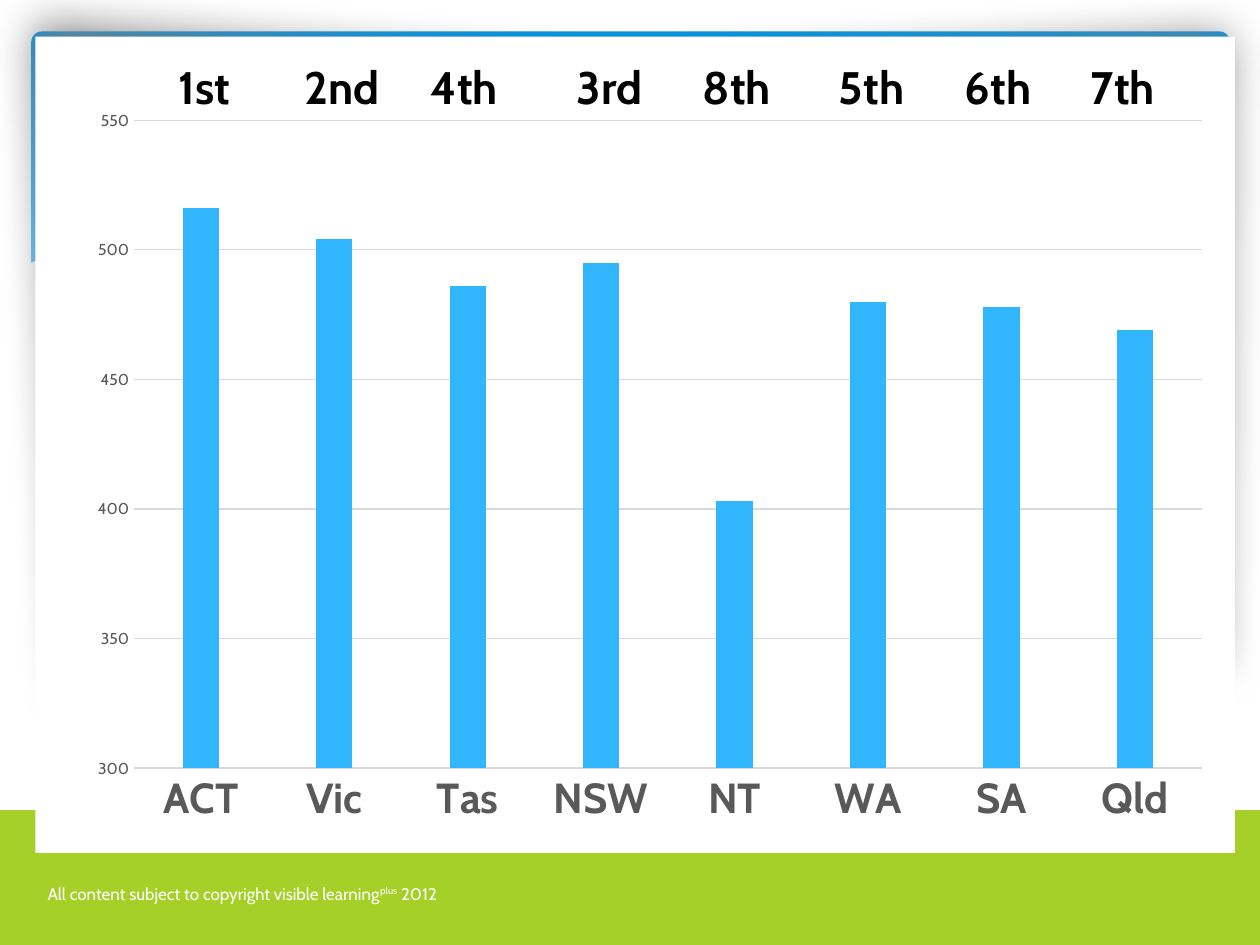
from lxml.etree import SubElement
from pptx import Presentation
from pptx.chart.data import CategoryChartData
from pptx.dml.color import RGBColor
from pptx.enum.chart import XL_CHART_TYPE as ChartType, XL_TICK_MARK as TickMark
from pptx.enum.shapes import MSO_SHAPE as Shape
from pptx.enum.text import MSO_ANCHOR as Anchor, MSO_AUTO_SIZE as AutoSize
from pptx.oxml import parse_xml
from pptx.oxml.ns import nsdecls, qn
from pptx.util import Inches, Pt

COLORS = {
    "white": "FFFFFF", "black": "000000", "green": "A5D028", "shade": "808080",
    "sky_top": "0293E0", "sky_end": "83D3FE", "bar": "31B6FD",
    "label": "595959", "grid": "D9D9D9",
}
FONT = "Cabin"
CELL = 0.1  # the grid has 100 columns and 75 rows of a tenth of an inch


def rgb(name):
    return RGBColor.from_string(COLORS[name])


def grid(*cells):
    return [Inches(cell * CELL) for cell in cells]


def style(font, size, color, bold=False):
    font.name, font.size, font.bold = FONT, Pt(size), bold
    font.color.rgb = rgb(color)


class SlideBuilder:
    def __init__(self, deck):
        self.slide = deck.slides.add_slide(deck.slide_layouts[6])
        self.shapes = self.slide.shapes

    def finish(self, shape, color):
        shape.shadow.inherit = False
        shape.line.fill.background()
        if color:
            shape.fill.solid()
            shape.fill.fore_color.rgb = rgb(color)
        return shape

    def box(self, cells, color=None, kind=Shape.RECTANGLE):
        return self.finish(self.shapes.add_shape(kind, *grid(*cells)), color)

    def gradient_panel(self, cells, colors, ends, corner):
        panel = self.box(cells, kind=Shape.ROUNDED_RECTANGLE)
        panel.adjustments[0] = corner
        panel.fill.gradient()
        panel.fill.gradient_angle = 270
        for stop, color, position in zip(panel.fill.gradient_stops, colors, ends):
            stop.color.rgb, stop.position = rgb(color), position

    def outline(self, points, color, soft_edge=0):
        start, *rest = points
        builder = self.shapes.build_freeform(*start, scale=Inches(CELL))
        builder.add_line_segments(rest, close=True)
        shape = self.finish(builder.convert_to_shape(), color)
        if soft_edge:
            effects = shape._element.spPr.find(qn("a:effectLst"))
            SubElement(effects, qn("a:softEdge"), rad=str(Inches(soft_edge * CELL)))

    def text(self, cells, runs, size, color, bold=False, tabs=(), grow=False):
        frame = self.shapes.add_textbox(*grid(*cells)).text_frame
        frame.word_wrap = True
        frame.vertical_anchor = Anchor.TOP
        frame.auto_size = AutoSize.SHAPE_TO_FIT_TEXT if grow else AutoSize.NONE
        paragraph = frame.paragraphs[0]
        if tabs:
            stops = SubElement(paragraph._p.get_or_add_pPr(), qn("a:tabLst"))
            for tab in tabs:
                SubElement(stops, qn("a:tab"), pos=str(Inches(tab * CELL)), algn="l")
        style(paragraph.font, size, color, bold)
        for words, raised in runs:
            run = paragraph.add_run()
            run.text = words
            if raised:
                run._r.get_or_add_rPr().set("baseline", "30000")

    def column_chart(self, cells, scores, low, high, step, plot):
        data = CategoryChartData()
        data.categories = list(scores)
        data.add_series("Series 1", scores.values())
        chart = self.shapes.add_chart(
            ChartType.COLUMN_CLUSTERED, *grid(*cells), data).chart
        chart.has_legend = chart.has_title = False
        style(chart.font, 10, "black")

        columns = chart.plots[0]
        columns.gap_width, columns.vary_by_categories = 269, False
        fill = columns.series[0].format.fill
        fill.solid()
        fill.fore_color.rgb = rgb("bar")

        states, values = chart.category_axis, chart.value_axis
        style(states.tick_labels.font, 24, "label", True)
        style(values.tick_labels.font, 9, "label")
        for axis in (states, values):
            axis.major_tick_mark = axis.minor_tick_mark = TickMark.NONE
        values.minimum_scale, values.maximum_scale = low, high
        values.major_unit = step
        values.format.line.fill.background()
        for line in (states.format.line, values.major_gridlines.format.line):
            line.color.rgb, line.width = rgb("grid"), Pt(0.75)

        # Inner plot area as shares of the chart
        area = chart._chartSpace.chart.plotArea
        for old in area.findall(qn("c:layout")):
            area.remove(old)
        shares = "".join(f'<c:{key} val="{share}"/>' for key, share in plot.items())
        area.insert(0, parse_xml(
            f'<c:layout {nsdecls("c")}><c:manualLayout><c:layoutTarget val="inner"/>'
            f'<c:xMode val="edge"/><c:yMode val="edge"/>{shares}'
            '</c:manualLayout></c:layout>'))


def main():
    deck = Presentation()
    deck.slide_width, deck.slide_height = grid(100, 75)
    page = SlideBuilder(deck)

    # Blue header with a white wave below it
    page.gradient_panel((2.5, 2.5, 95.1, 27), ("sky_top", "sky_end"), (0, 0.9), 0.03)
    wave = [(97.7, 24.6), (94, 25.9), (89.9, 26.9), (85, 27.5), (79.3, 27.6),
            (72.6, 27.2), (64.8, 26.2), (55.5, 24.5), (44.7, 22), (36.5, 20.2),
            (29.2, 19), (23, 18.5), (17.7, 18.4), (11.9, 18.7), (7.6, 19.5),
            (4.6, 20.3), (2.3, 21.3), (2.3, 32.9), (97.7, 32.9)]
    page.outline(wave, "white")

    # Green footer band
    page.box((0, 64.3, 100, 10.7), "green")

    # White sheet with its soft curved shade
    shade = [(2.1, 59.5), (-1.1, -1.6), (49, 1.9), (100.8, -0.7),
             (99.6, 58.4), (46.7, 45.8)]
    page.outline(shade, "shade", soft_edge=3.5)
    page.box((2.8, 2.9, 95.2, 64.8), "white")

    # Copyright line
    page.text((2.8, 69.6, 56.7, 2.6),
              [("All content subject to copyright visible learning", False),
               ("plus", True), (" 2012", False)], 9.7, "white", grow=True)

    # Scores by state
    scores = {"ACT": 516, "Vic": 504, "Tas": 486, "NSW": 495,
              "NT": 403, "WA": 480, "SA": 478, "Qld": 469}
    page.column_chart((5.9, 7.6, 91.3, 59.1), scores, 300, 550, 50,
                      {"x": 0.052, "y": 0.033, "w": 0.928, "h": 0.87})

    # Rank above each column
    ranks = ["1st", "2nd", "4th", "3rd", "8th", "5th", "6th", "7th"]
    page.text((13.2, 4.2, 82.5, 6.7), [("\t".join(ranks), False)], 26, "black",
              bold=True, tabs=(10, 20, 31.6, 41.6, 52.4, 62.4, 72.4))

    deck.save("out.pptx")


if __name__ == "__main__":
    main()
